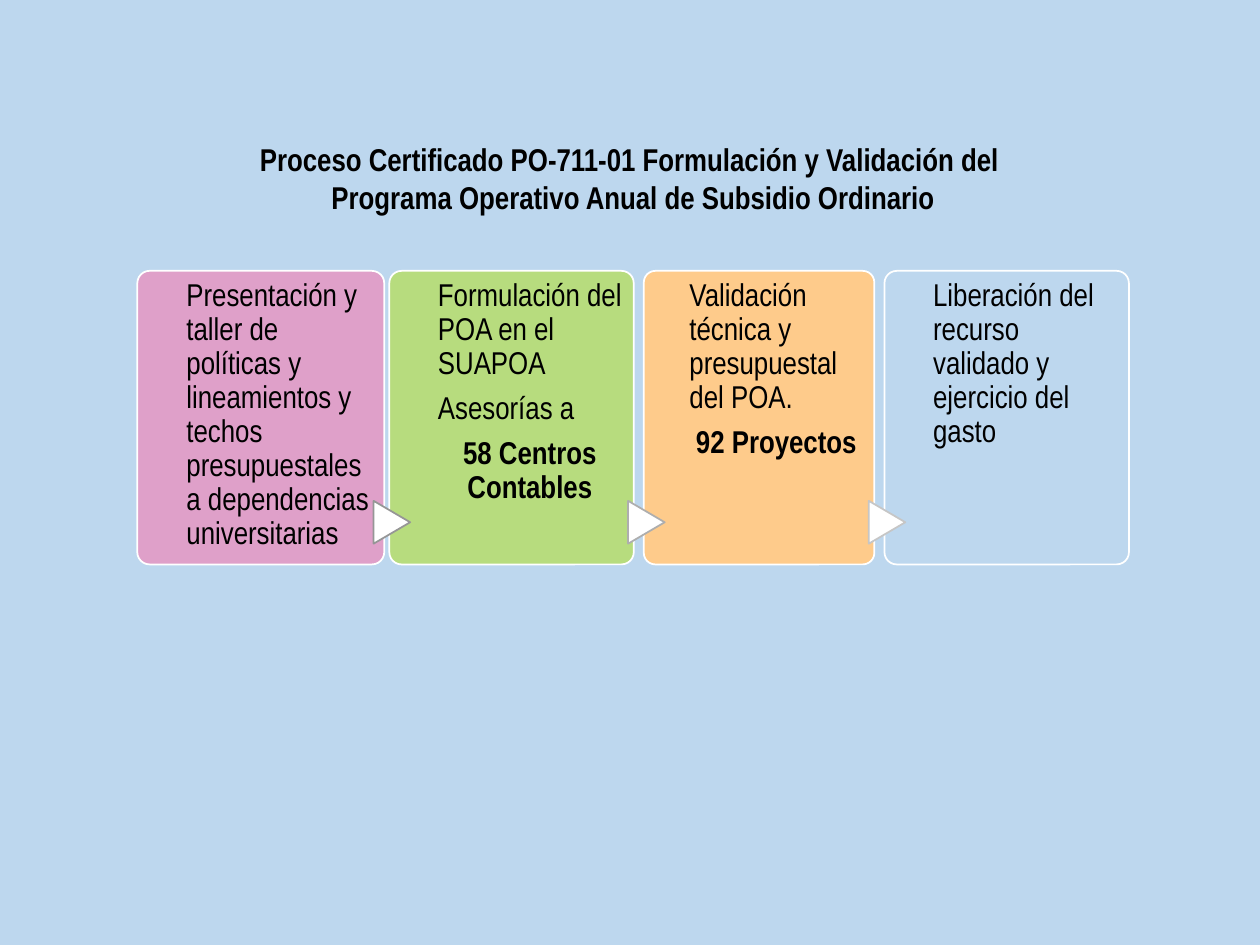
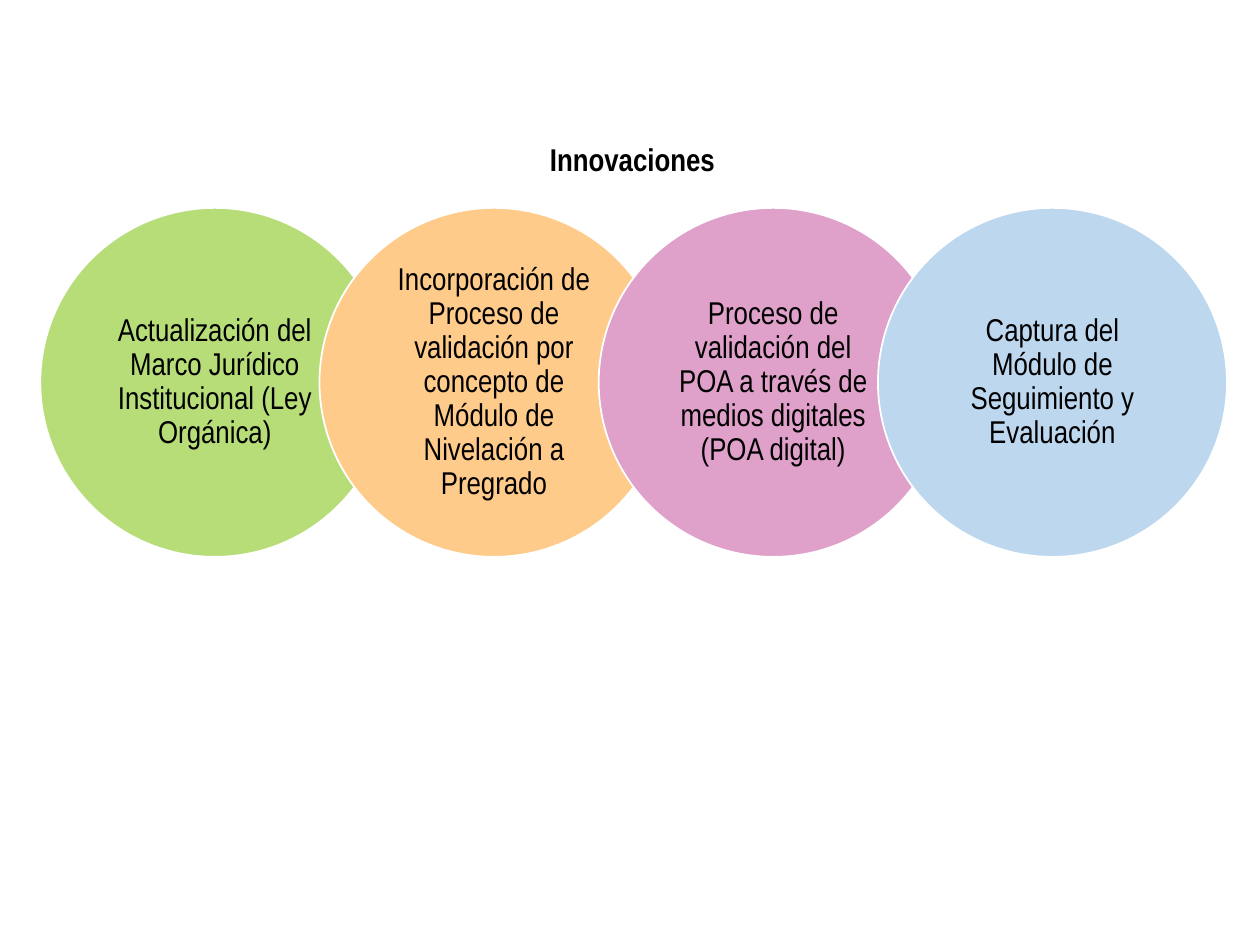
"""Build two slides: the certified process steps and the innovations."""
from dataclasses import dataclass
from typing import Any

from lxml.etree import SubElement
from pptx import Presentation
from pptx.dml.color import RGBColor
from pptx.enum.shapes import MSO_SHAPE
from pptx.enum.text import MSO_ANCHOR, MSO_AUTO_SIZE, PP_ALIGN
from pptx.oxml.ns import qn
from pptx.util import Inches, Pt

COLORS = {
    "pink": "DFA0C9",
    "green": "B7DD79",
    "orange": "FECB8B",
    "blue": "BDD7EE",
    "white": "FFFFFF",
    "black": "000000",
    "arrow1": "969696",
    "arrow2": "AEAEAE",
    "arrow3": "C6C6C6",
}
FONT = {"name": "Arial Narrow", "size": Pt(18)}
BODY = {"line_spacing": 0.9, "space_after": Pt(6.3)}
TITLE_SPACING = {"line_spacing": 1.0, "space_before": Pt(0)}
PANEL_TOP, PANEL_HEIGHT = 2.15, 2.33
ARROW_TOP, ARROW_WIDTH, ARROW_HEIGHT = 4.0, 0.34, 0.29
CORNER_INSET = 0.03
CIRCLE_LEFT, CIRCLE_TOP, CIRCLE_SIZE = 0.32, 1.65, 2.77
CIRCLE_STEP = 0.8 * CIRCLE_SIZE


@dataclass(frozen=True)
class Panel:
    left: float
    width: float
    color: str
    lines: tuple[str, ...]
    total: str = ""
    alpha: int = 100
    arrow: str = ""


@dataclass(frozen=True)
class Circle:
    color: str
    text: str


PANELS = (
    Panel(1.09, 1.96, "pink", (
        "Presentación y taller de políticas y lineamientos y techos "
        "presupuestales a dependencias universitarias",)),
    Panel(3.09, 1.94, "green",
          ("Formulación del POA en el SUAPOA", "Asesorías a"),
          "58 Centros Contables", alpha=95, arrow="arrow1"),
    Panel(5.11, 1.83, "orange",
          ("Validación técnica y presupuestal del POA.",),
          "92 Proyectos", arrow="arrow2"),
    Panel(7.02, 1.94, "blue",
          ("Liberación del recurso validado y ejercicio del gasto",),
          arrow="arrow3"),
)
CIRCLES = (
    Circle("green", "Actualización del Marco Jurídico Institucional (Ley Orgánica)"),
    Circle("orange", "Incorporación de Proceso de validación por concepto de "
                     "Módulo de Nivelación a Pregrado"),
    Circle("pink", "Proceso de validación del POA a través de medios digitales "
                   "(POA digital)"),
    Circle("blue", "Captura del Módulo de Seguimiento y Evaluación"),
)


def rgb(name: str) -> RGBColor:
    return RGBColor.from_string(COLORS[name])


def set_attrs(target: Any, values: dict[str, Any]) -> None:
    for key, value in values.items():
        setattr(target, key, value)


def set_frame(tf: Any, anchor: MSO_ANCHOR, insets: tuple[float, ...]) -> None:
    set_attrs(tf, {"word_wrap": True, "auto_size": MSO_AUTO_SIZE.NONE,
                   "vertical_anchor": anchor})
    sides = ("margin_left", "margin_top", "margin_right", "margin_bottom")
    set_attrs(tf, {side: Inches(inset) for side, inset in zip(sides, insets)})


def add_paragraph(tf: Any, text: str, align: PP_ALIGN, spacing: dict[str, Any],
                  bold: bool = False) -> None:
    p = tf.paragraphs[0] if not tf.text else tf.add_paragraph()
    set_attrs(p, {"alignment": align, **spacing})
    r = p.add_run()
    r.text = text
    set_attrs(r.font, {**FONT, "bold": bold})
    r.font.color.rgb = rgb("black")


def add_slide(prs: Any, background: str, left: float, width: float, height: float,
              lines: tuple[str, ...]) -> Any:
    s = prs.slides.add_slide(prs.slide_layouts[5])
    s.background.fill.solid()
    s.background.fill.fore_color.rgb = rgb(background)
    title = s.shapes.title
    set_attrs(title, {"left": Inches(left), "top": Inches(1.06),
                      "width": Inches(width), "height": Inches(height)})
    set_frame(title.text_frame, MSO_ANCHOR.TOP, (0.1, 0.05, 0.1, 0.05))
    for line in lines:
        add_paragraph(title.text_frame, line, PP_ALIGN.CENTER, TITLE_SPACING, bold=True)
    return s


def add_shape(s: Any, kind: MSO_SHAPE, left: float, top: float, width: float,
              height: float, fill: str, line: str = "white") -> Any:
    sp = s.shapes.add_shape(kind, Inches(left), Inches(top), Inches(width), Inches(height))
    sp.shadow.inherit = False
    sp.fill.solid()
    sp.fill.fore_color.rgb = rgb(fill)
    sp.line.color.rgb = rgb(line)
    sp.line.width = Pt(1)
    return sp


def set_alpha(sp: Any, percent: int) -> None:
    color = sp.fill._xPr.find(qn("a:solidFill"))[0]
    SubElement(color, qn("a:alpha")).set("val", str(percent * 1000))


def draw_panel(s: Any, panel: Panel) -> None:
    sp = add_shape(s, MSO_SHAPE.ROUNDED_RECTANGLE, panel.left, PANEL_TOP,
                   panel.width, PANEL_HEIGHT, panel.color)
    sp.adjustments[0] = 0.05
    if panel.alpha < 100:
        set_alpha(sp, panel.alpha)
    tf = sp.text_frame
    set_frame(tf, MSO_ANCHOR.TOP, (0.2 * panel.width - CORNER_INSET, 0.04,
                                   0.05 * panel.width - CORNER_INSET, 0))
    for line in panel.lines:
        add_paragraph(tf, line, PP_ALIGN.LEFT, BODY)
    if panel.total:
        add_paragraph(tf, panel.total, PP_ALIGN.CENTER, BODY, bold=True)
    if panel.arrow:
        arrow = add_shape(s, MSO_SHAPE.FLOWCHART_EXTRACT, panel.left - 0.15, ARROW_TOP,
                          ARROW_WIDTH, ARROW_HEIGHT, "white", panel.arrow)
        arrow.rotation = 90


def draw_circle(s: Any, index: int, circle: Circle) -> None:
    sp = add_shape(s, MSO_SHAPE.OVAL, CIRCLE_LEFT + index * CIRCLE_STEP, CIRCLE_TOP,
                   CIRCLE_SIZE, CIRCLE_SIZE, circle.color)
    set_frame(sp.text_frame, MSO_ANCHOR.MIDDLE, (0.15, 0.03, 0.15, 0.03))
    add_paragraph(sp.text_frame, circle.text, PP_ALIGN.CENTER, BODY)


def main() -> None:
    prs = Presentation()
    prs.slide_width, prs.slide_height = Inches(10), Inches(7.5)

    s = add_slide(prs, "blue", 0.3, 9.45, 0.71, (
        "Proceso Certificado PO-711-01 Formulación y Validación del ",
        "Programa Operativo Anual de Subsidio Ordinario"))
    for panel in PANELS:
        draw_panel(s, panel)

    s = add_slide(prs, "white", 1.86, 6.32, 0.4, ("Innovaciones",))
    for index, circle in enumerate(CIRCLES):
        draw_circle(s, index, circle)

    prs.save("out.pptx")


if __name__ == "__main__":
    main()
